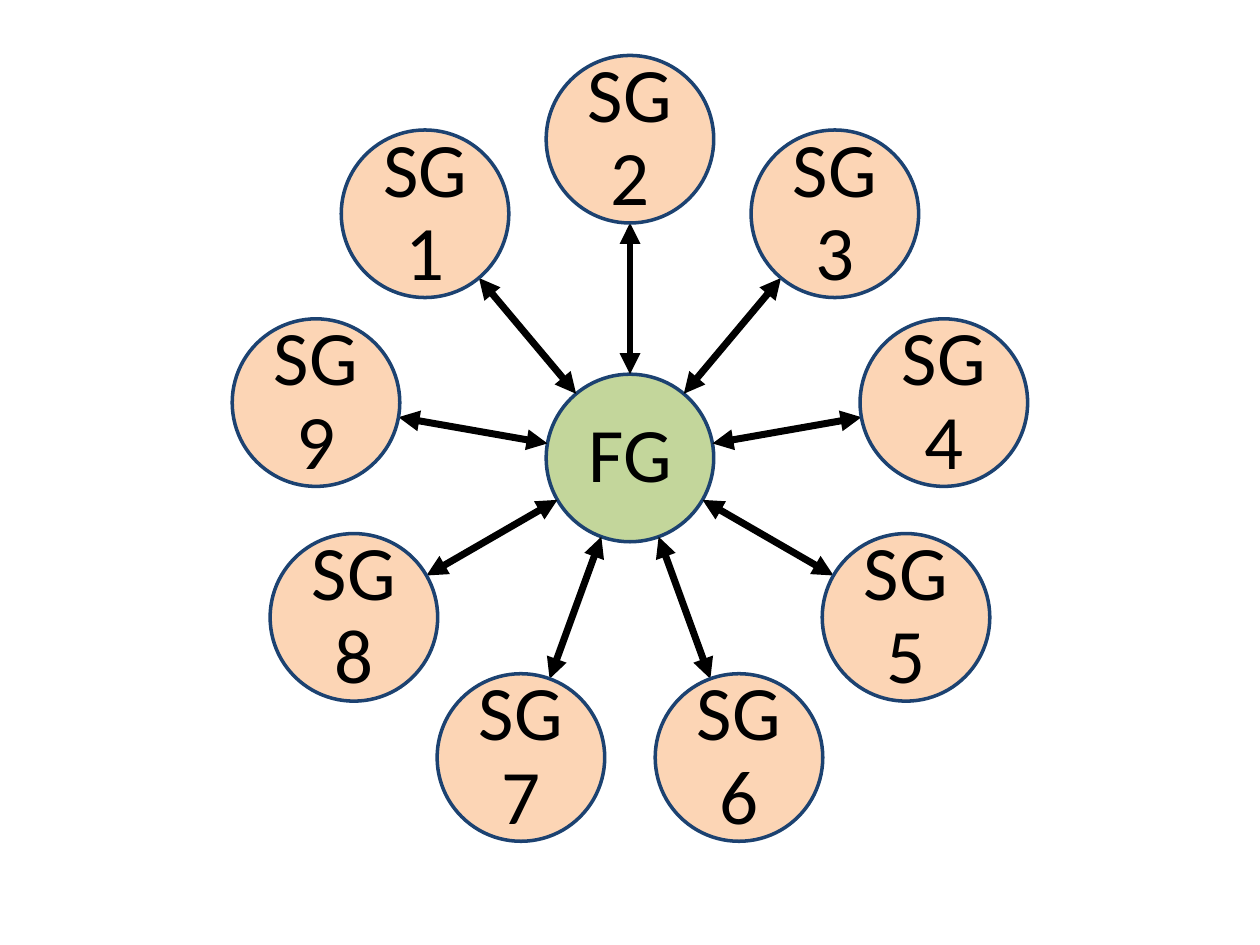
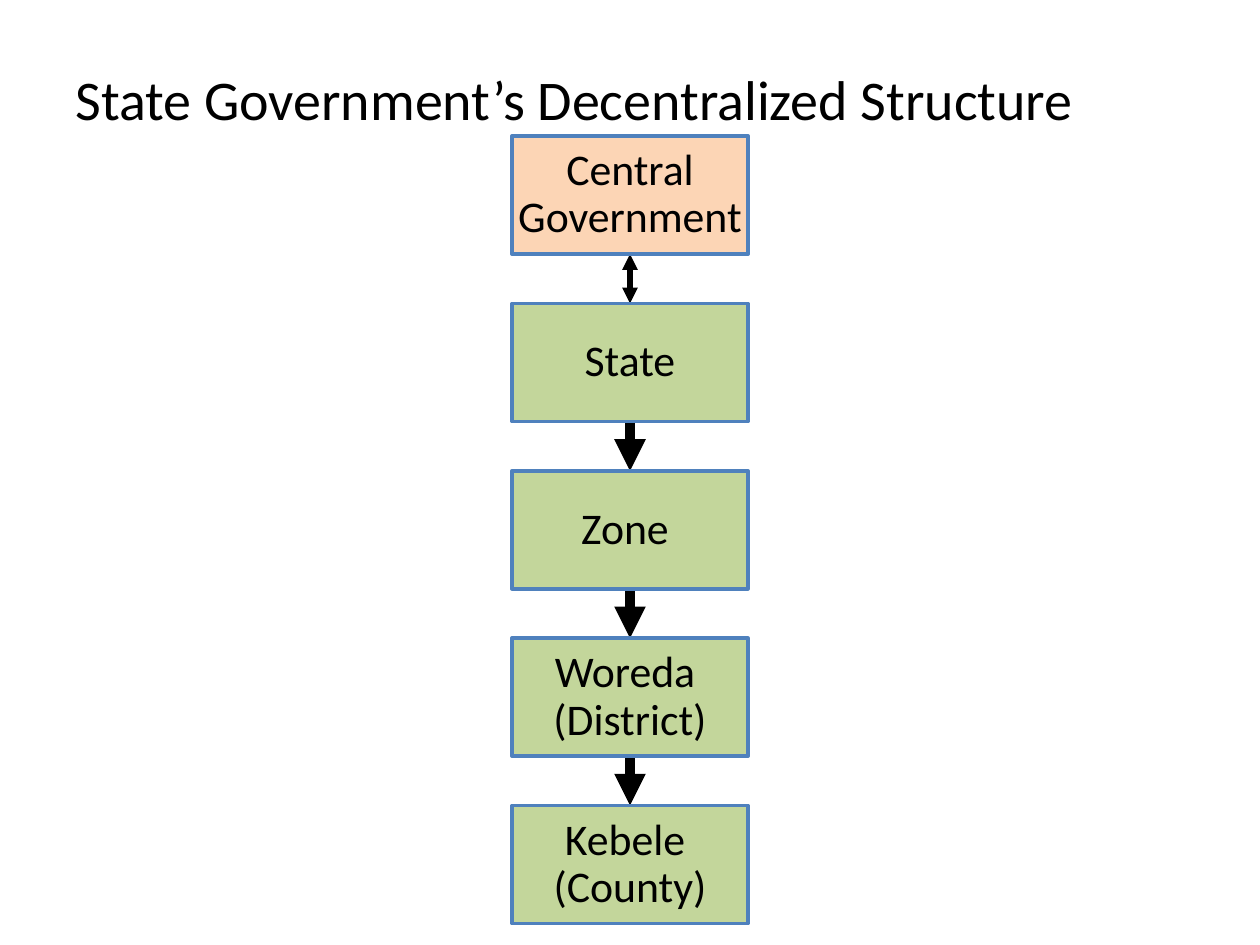
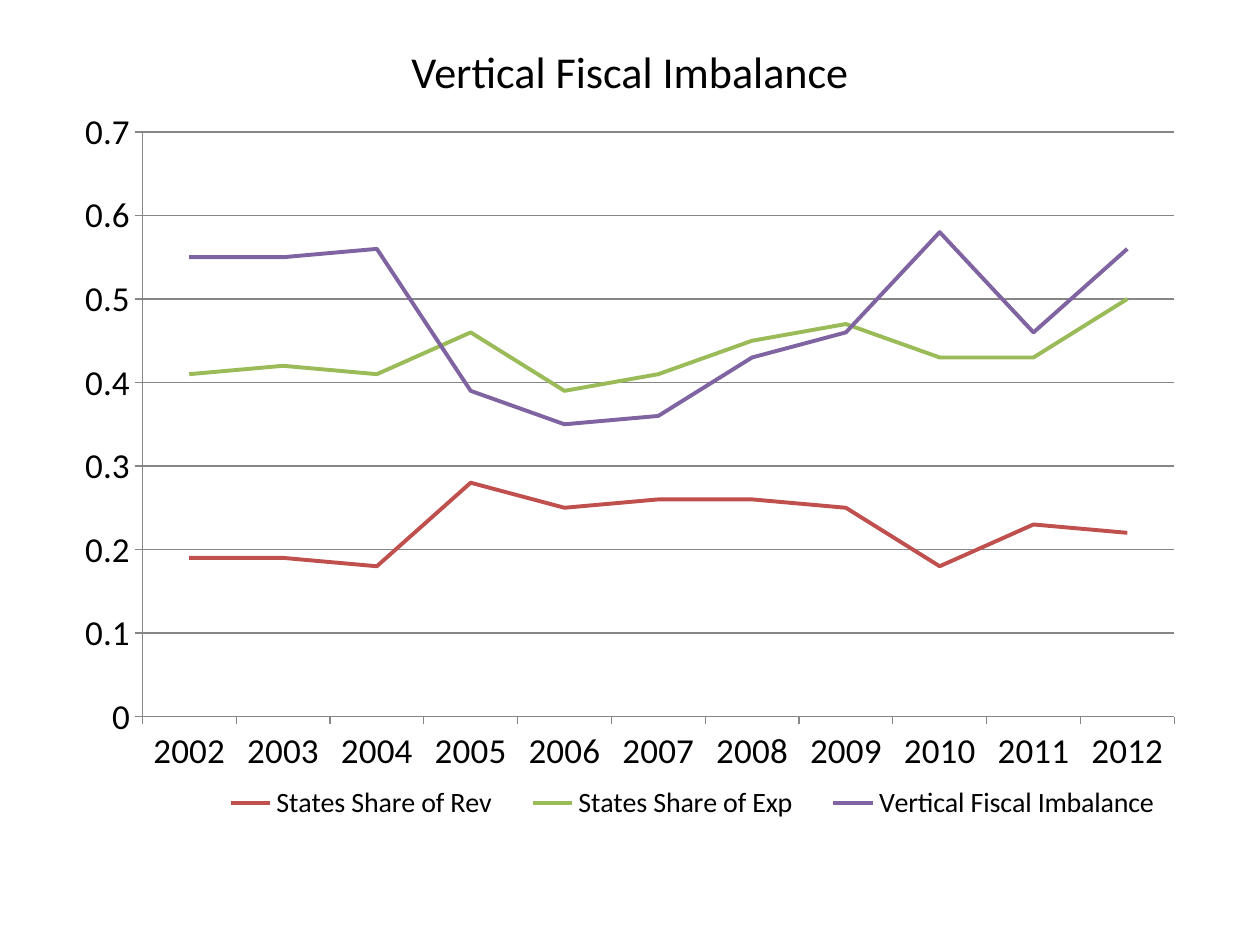
from math import cos, radians, sin

from lxml import etree
from pptx import Presentation
from pptx.chart.data import CategoryChartData
from pptx.dml.color import RGBColor
from pptx.enum.chart import XL_CHART_TYPE, XL_LEGEND_POSITION, XL_TICK_MARK
from pptx.enum.shapes import MSO_CONNECTOR, MSO_SHAPE
from pptx.enum.text import MSO_ANCHOR, PP_ALIGN
from pptx.oxml.ns import qn
from pptx.util import Inches, Pt

LEFT, CENTER = PP_ALIGN.LEFT, PP_ALIGN.CENTER
MIDDLE = MSO_ANCHOR.MIDDLE
OVAL, RECT = MSO_SHAPE.OVAL, MSO_SHAPE.RECTANGLE
STRAIGHT = MSO_CONNECTOR.STRAIGHT
LINE_CHART = XL_CHART_TYPE.LINE
BOTTOM, OUTSIDE = XL_LEGEND_POSITION.BOTTOM, XL_TICK_MARK.OUTSIDE

FONT = "Calibri"
COLORS = {
    "text": "000000", "federal": "C3D69B", "peach": "FCD5B5",
    "circle_line": "1C4271", "box_line": "4F81BD", "axis": "868686",
    "revenue": "C0504D", "expenditure": "9BBB59", "imbalance": "8064A2",
}

# The slide is a grid of 100 columns by 75 rows
COLS, ROWS = 100, 75
CELL = Inches(0.1)


def cells(*counts):
    return [round(n * CELL) for n in counts]


def rgb(name):
    return RGBColor.from_string(COLORS[name])


def set_line(line, color, width):
    line.color.rgb = rgb(color)
    line.width = Pt(width)


def set_font(font, size):
    font.name = FONT
    font.size = Pt(size)
    font.color.rgb = rgb("text")


def write(sp, text, size, align=CENTER, spacing=None, inset=None):
    """Fill a shape or text box with one formatted paragraph."""
    tf = sp.text_frame
    tf.word_wrap = True
    tf.vertical_anchor = MIDDLE
    if inset is not None:
        tf.margin_left = tf.margin_right = Inches(inset)
        tf.margin_top = tf.margin_bottom = Inches(inset)
    p = tf.paragraphs[0]
    p.text = text
    p.alignment = align
    if spacing:
        p.line_spacing = spacing
    for r in p.runs:
        set_font(r.font, size)


def add_title(s, box, text, size, align):
    write(s.shapes.add_textbox(*cells(*box)), text, size, align)


def add_node(s, kind, box, text, size, fill, line, inset):
    sp = s.shapes.add_shape(kind, *cells(*box))
    sp.shadow.inherit = False
    sp.fill.solid()
    sp.fill.fore_color.rgb = rgb(fill)
    set_line(sp.line, line, 2)
    write(sp, text, size, spacing=0.9, inset=inset)


def add_arrow(s, start, end, width, both=False):
    cxn = s.shapes.add_connector(STRAIGHT, *cells(*start, *end))
    set_line(cxn.line, "text", width)
    ln = cxn.line._get_or_add_ln()
    for tag in ("a:headEnd", "a:tailEnd") if both else ("a:tailEnd",):
        etree.SubElement(ln, qn(tag), type="triangle")
    etree.SubElement(ln.getparent(), qn("a:effectLst"))


def add_hub(s, box, hub, spokes):
    """Draw a hub circle with evenly spaced circles, clockwise from the top."""
    x, y, w, h = box
    cx, cy = x + w / 2, y + h / 2
    d = 13.3
    ring = (h - d) / 2

    def at(angle, radius):
        return cx + radius * sin(angle), cy - radius * cos(angle)

    def circle(center, text, fill):
        left, top = center[0] - d / 2, center[1] - d / 2
        add_node(s, OVAL, (left, top, d, d), text, 44, fill, "circle_line", 0.03)

    circle((cx, cy), hub, "federal")
    for i, text in enumerate(spokes):
        angle = radians(i * 360 / len(spokes))
        add_arrow(s, at(angle, d / 2), at(angle, ring - d / 2), 4, both=True)
        circle(at(angle, ring), text, "peach")


def add_ladder(s, box, levels):
    """Stack the levels of government, joined by arrows."""
    x, y, w, h = box
    step = h * 0.15
    pitch = (h - step) / (len(levels) - 1)
    mid = x + w / 2
    for i, text in enumerate(levels):
        top = y + i * pitch
        first = i == 0
        if i < len(levels) - 1:
            add_arrow(s, (mid, top + step), (mid, top + pitch),
                      3 if first else 6, both=first)
        add_node(s, RECT, (x, top, w, step), text, 25,
                 "peach" if first else "federal", "box_line", 0.02)


def set_layout(parent, before, inner=False, **shares):
    """Place a chart part by shares of the chart's size."""
    for old in parent.findall(qn("c:layout")):
        parent.remove(old)
    layout = etree.Element(qn("c:layout"))
    manual = etree.SubElement(layout, qn("c:manualLayout"))
    if inner:
        etree.SubElement(manual, qn("c:layoutTarget"), val="inner")
    for key in ("xMode", "yMode"):
        etree.SubElement(manual, qn("c:" + key), val="edge")
    for key, share in shares.items():
        etree.SubElement(manual, qn("c:" + key), val=str(share))
    if before is None:
        parent.insert(0, layout)
    else:
        parent.find(qn(before)).addnext(layout)


def add_line_chart(s, box, cats, series):
    data = CategoryChartData()
    data.categories = cats
    for name, _, values in series:
        data.add_series(name, values)
    chart = s.shapes.add_chart(LINE_CHART, *cells(*box), data).chart
    chart.has_title = False
    set_font(chart.font, 20)

    # Lines
    plot = chart.plots[0]
    plot.vary_by_categories = False
    for line, (_, color, _) in zip(plot.series, series):
        line.smooth = False
        set_line(line.format.line, color, 2.25)

    # Axes
    for axis in (chart.category_axis, chart.value_axis):
        axis.major_tick_mark = OUTSIDE
        set_line(axis.format.line, "axis", 0.75)
    value = chart.value_axis
    value.minimum_scale, value.maximum_scale, value.major_unit = 0, 0.7, 0.1
    value.tick_labels.number_format = "General"
    value.tick_labels.number_format_is_linked = False
    value.has_major_gridlines = True
    set_line(value.major_gridlines.format.line, "axis", 0.75)

    # Legend and plot area
    chart.has_legend = True
    legend = chart.legend
    legend.position = BOTTOM
    legend.include_in_layout = False
    set_font(legend.font, 16)
    set_layout(legend._element, "c:legendPos", x=0.12, y=0.91, w=0.87, h=0.07)
    area = chart._chartSpace.chart.plotArea
    set_layout(area, None, inner=True, x=0.07, y=0.05, w=0.91, h=0.78)


def main():
    prs = Presentation()
    prs.slide_width, prs.slide_height = cells(COLS, ROWS)
    blank = prs.slide_layouts[6]

    # Federal government and the states
    s = prs.slides.add_slide(blank)
    order = [2, 3, 4, 5, 6, 7, 8, 9, 1]
    add_hub(s, (0, 4.4, COLS, 63.9), "FG", [f"SG{n}" for n in order])

    # Levels of government
    s = prs.slides.add_slide(blank)
    add_title(s, (5, 3, 90, 9.5), "State Government’s Decentralized Structure", 32, LEFT)
    add_ladder(s, (40.63, 10.8, 18.74, 62.5),
               ["Central Government", "State", "Zone ",
                "Woreda \v(District)", "Kebele \v(County)"])

    # Fiscal imbalance
    s = prs.slides.add_slide(blank)
    add_title(s, (5, 3, 90, 5.3), "Vertical Fiscal Imbalance", 25.2, CENTER)
    add_line_chart(s, (5, 7.5, 90, 59.5), [str(y) for y in range(2002, 2013)], [
        ("States Share of Rev", "revenue",
         [0.19, 0.19, 0.18, 0.28, 0.25, 0.26, 0.26, 0.25, 0.18, 0.23, 0.22]),
        ("States Share of Exp", "expenditure",
         [0.41, 0.42, 0.41, 0.46, 0.39, 0.41, 0.45, 0.47, 0.43, 0.43, 0.5]),
        ("Vertical Fiscal Imbalance", "imbalance",
         [0.55, 0.55, 0.56, 0.39, 0.35, 0.36, 0.43, 0.46, 0.58, 0.46, 0.56]),
    ])

    prs.save("out.pptx")


if __name__ == "__main__":
    main()
